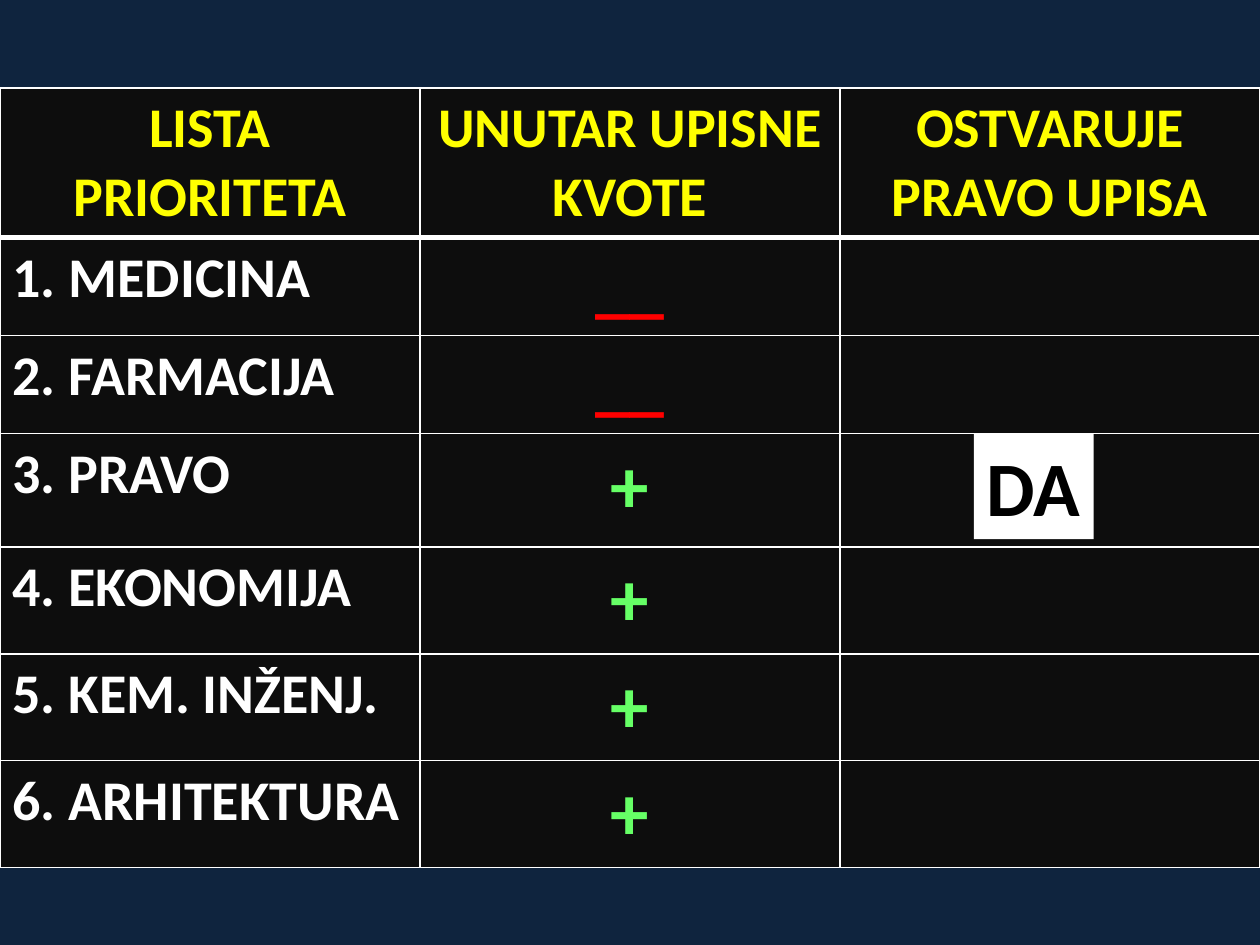
from lxml.etree import SubElement
from pptx import Presentation
from pptx.dml.color import RGBColor
from pptx.enum.shapes import MSO_SHAPE
from pptx.enum.text import MSO_ANCHOR, PP_ALIGN
from pptx.oxml.ns import qn
from pptx.util import Inches, Pt

NAVY = RGBColor(0x0F, 0x24, 0x3E)
INK = RGBColor(0x0D, 0x0D, 0x0D)
BLACK = RGBColor(0, 0, 0)
WHITE = RGBColor(0xFF, 0xFF, 0xFF)
YELLOW = RGBColor(0xFF, 0xFF, 0)
RED = RGBColor(0xFF, 0, 0)
GREEN = RGBColor(0x66, 0xFF, 0x66)

# Content: programme, within quota
HEADERS = ["LISTA PRIORITETA", "UNUTAR UPISNE KVOTE", "OSTVARUJE PRAVO UPISA"]
CHOICES = [
    ("1. MEDICINA", "__"),
    ("2. FARMACIJA", "__"),
    ("3. PRAVO", "+"),
    ("4. EKONOMIJA", "+"),
    ("5. KEM. INŽENJ.", "+"),
    ("6. ARHITEKTURA", "+"),
]
MARKS = {"__": (40, RED), "+": (44, GREEN)}  # size, colour
ROW_HEIGHTS = [1.16, 0.77, 0.77, 0.9, 0.83, 0.83, 0.83]


def write(tf, text, size, color, align=PP_ALIGN.LEFT):
    tf.text = text
    p = tf.paragraphs[0]
    p.alignment = align
    font = p.runs[0].font
    font.name, font.size, font.bold = "Calibri", Pt(size), True
    font.color.rgb = color


def style_cell(cell, top, bottom):
    """Set white borders, then the dark fill."""
    tcPr = cell._tc.get_or_add_tcPr()
    for side, width in (("L", 1), ("R", 1), ("T", top), ("B", bottom)):
        ln = SubElement(tcPr, qn(f"a:ln{side}"), w=str(Pt(width)))
        SubElement(SubElement(ln, qn("a:solidFill")), qn("a:srgbClr"), val=str(WHITE))
    cell.fill.solid()
    cell.fill.fore_color.rgb = INK


prs = Presentation()
prs.slide_width, prs.slide_height = Inches(10), Inches(7.5)
s = prs.slides.add_slide(prs.slide_layouts[6])
s.background.fill.solid()
s.background.fill.fore_color.rgb = NAVY

# Priority table
table = s.shapes.add_table(len(CHOICES) + 1, len(HEADERS), 0, Inches(0.7),
                           prs.slide_width, Inches(sum(ROW_HEIGHTS))).table
for row, height in zip(table.rows, ROW_HEIGHTS):
    row.height = Inches(height)
for i, row in enumerate(table.rows):
    for cell in row.cells:
        style_cell(cell, 3 if i == 1 else 1, 3 if i == 0 else 1)

for j, header in enumerate(HEADERS):
    write(table.cell(0, j).text_frame, header, 32, YELLOW, PP_ALIGN.CENTER)
for i, (programme, mark) in enumerate(CHOICES, 1):
    write(table.cell(i, 0).text_frame, programme, 32, WHITE)
    write(table.cell(i, 1).text_frame, mark, *MARKS[mark], PP_ALIGN.CENTER)

# Answer box
box = s.shapes.add_shape(MSO_SHAPE.RECTANGLE, Inches(7.73), Inches(3.44),
                         Inches(0.95), Inches(0.84))
box.shadow.inherit = False
box.fill.solid()
box.fill.fore_color.rgb = WHITE
box.line.fill.background()
tf = box.text_frame
tf.word_wrap = False
tf.vertical_anchor = MSO_ANCHOR.TOP
write(tf, "DA", 44, BLACK)

prs.save("out.pptx")
